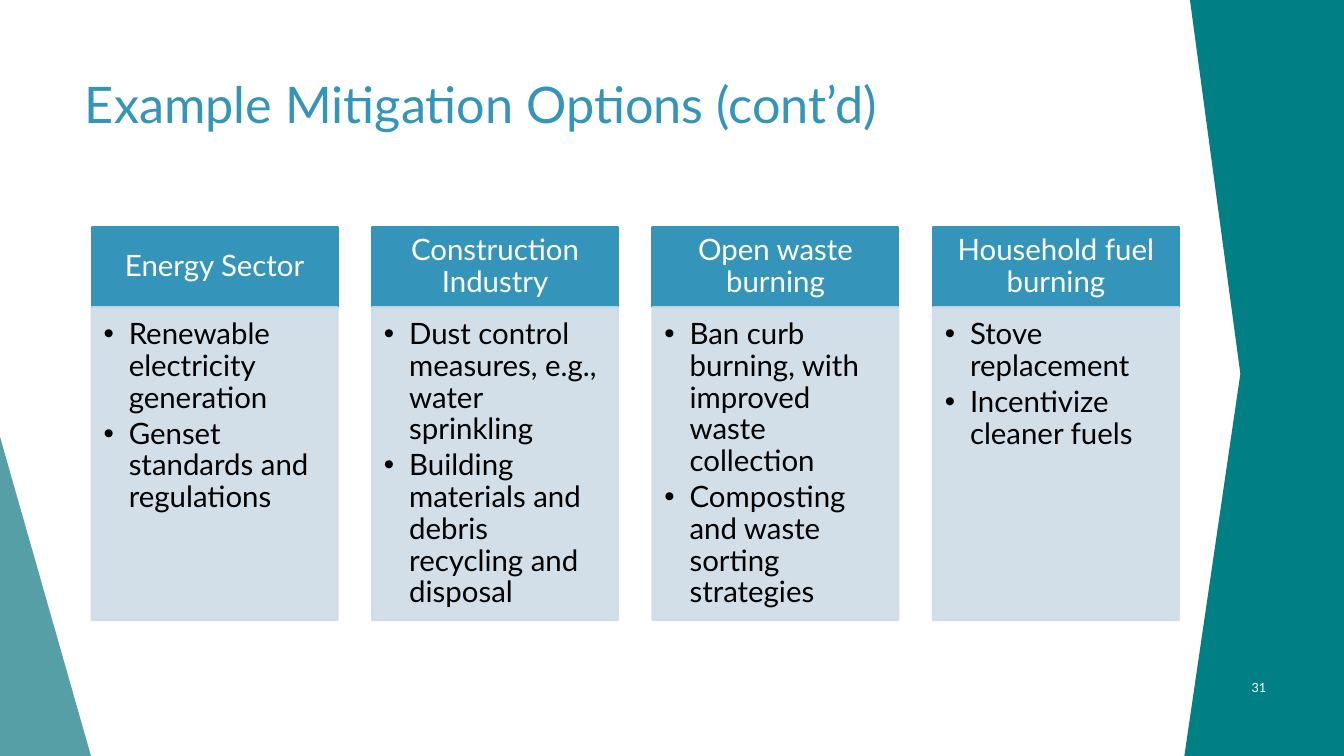
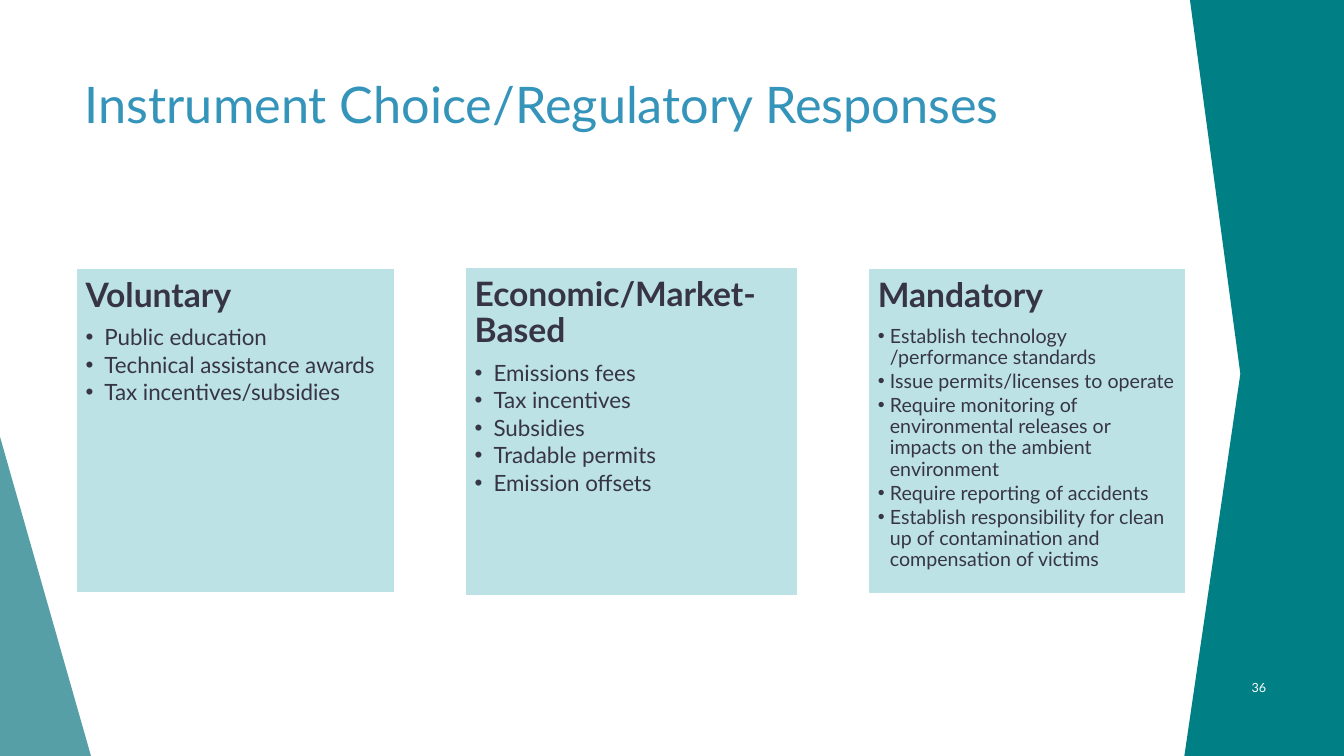
from dataclasses import dataclass

from lxml import etree
from pptx import Presentation
from pptx.dml.color import RGBColor
from pptx.enum.shapes import MSO_SHAPE
from pptx.enum.text import MSO_ANCHOR, MSO_AUTO_SIZE, PP_ALIGN
from pptx.oxml.ns import qn
from pptx.util import Pt

RECTANGLE = MSO_SHAPE.RECTANGLE
RIGHT_TRIANGLE = MSO_SHAPE.RIGHT_TRIANGLE
TOP, MIDDLE = MSO_ANCHOR.TOP, MSO_ANCHOR.MIDDLE
LEFT, CENTER, RIGHT = PP_ALIGN.LEFT, PP_ALIGN.CENTER, PP_ALIGN.RIGHT
NO_AUTO_SIZE = MSO_AUTO_SIZE.NONE
TITLE_ONLY = 5


@dataclass(frozen=True)
class Theme:
    font: str = "Lato"
    accent: str = "3494BA"
    band: str = "008085"
    wedge: str = "3A8F98"
    panel: str = "CEDCE7"
    card: str = "BCE2E6"
    ink: str = "373545"
    black: str = "000000"
    white: str = "FFFFFF"
    title_size: float = 36
    column_size: float = 21
    card_head_size: float = 24
    number_size: float = 9


@dataclass(frozen=True)
class Box:
    left: float
    top: float
    width: float
    height: float

    def lengths(self):
        return [Pt(v) for v in (self.left, self.top, self.width, self.height)]


THEME = Theme()
SLIDE = Box(0, 0, 960, 540)
TITLE_BOX = Box(53.5, 48.5, 858, 103.5)
NUMBER_BOX = Box(857.5, 476.5, 54, 29)
SECTORS_BOX = Box(65.5, 162, 776.6, 281)
BAND_OUTLINE = [(850, 0), (960, 0), (960, 540), (846, 540), (886, 267)]

SECTORS = [
    ("Energy Sector",
     ["Renewable electricity generation", "Genset standards and regulations"]),
    ("Construction Industry",
     ["Dust control measures, e.g., water sprinkling",
      "Building materials and debris recycling and disposal"]),
    ("Open waste burning",
     ["Ban curb burning, with improved waste collection",
      "Composting and waste sorting strategies"]),
    ("Household fuel burning",
     ["Stove replacement", "Incentivize cleaner fuels"]),
]

INSTRUMENTS = [
    (Box(54, 191.5, 228, 232.5), 16, 13.5, "Voluntary",
     ["Public education", "Technical assistance awards",
      "Tax incentives/subsidies"]),
    (Box(332, 191, 238, 234.5), 16, 13.5, "Economic/Market-Based",
     ["Emissions fees", "Tax incentives", "Subsidies", "Tradable permits",
      "Emission offsets"]),
    (Box(620, 191.5, 227, 233), 14, 8.6, "Mandatory",
     ["Establish technology /performance standards",
      "Issue permits/licenses to operate",
      "Require monitoring of environmental releases or impacts on the ambient environment",
      "Require reporting of accidents",
      "Establish responsibility for clean up of contamination and compensation of victims"]),
]


def paint(shape, fill, line=None, opacity=100):
    shape.shadow.inherit = False
    shape.fill.solid()
    shape.fill.fore_color.rgb = RGBColor.from_string(fill)
    if line:
        shape.line.color.rgb = RGBColor.from_string(line)
        shape.line.width = Pt(1.5)
    else:
        shape.line.fill.background()
    if opacity < 100:
        for color in shape.element.spPr.iter(qn("a:srgbClr")):
            etree.SubElement(color, qn("a:alpha"), val=str(opacity * 1000))


def add_panel(page, box, fill, line, opacity=100):
    panel = page.shapes.add_shape(RECTANGLE, *box.lengths())
    paint(panel, fill, line, opacity)
    return panel


def set_frame(frame, insets, anchor=TOP):
    frame.word_wrap = True
    frame.auto_size = NO_AUTO_SIZE
    frame.vertical_anchor = anchor
    (frame.margin_left, frame.margin_top,
     frame.margin_right, frame.margin_bottom) = [Pt(v) for v in insets]


def style(para, size, color, align=LEFT, bold=False):
    para.alignment = align
    for span in para.runs:
        span.font.name = THEME.font
        span.font.size = Pt(size)
        span.font.bold = bold
        span.font.color.rgb = RGBColor.from_string(color)


def space(para, size, share):
    para.line_spacing = 0.9
    para.space_after = Pt(round(size * share, 2))


def write_bullets(paras, items, size, color, indent):
    for para, item in zip(paras, items):
        para.text = item
        para.level = 1
        properties = para._p.get_or_add_pPr()
        properties.set("marL", str(Pt(indent)))
        properties.set("indent", str(-Pt(indent)))
        etree.SubElement(properties, qn("a:buFont"), typeface="Arial")
        etree.SubElement(properties, qn("a:buChar"), char="•")
        space(para, size, 0.15)
        style(para, size, color)


def grow(frame, count):
    while len(frame.paragraphs) < count:
        frame.add_paragraph()
    return frame.paragraphs


def add_sector(page, box, heading, items):
    head_height = 57.5
    size = THEME.column_size
    head = add_panel(page, Box(box.left, box.top, box.width, head_height),
                     THEME.accent, THEME.accent)
    set_frame(head.text_frame, (11.5, 6.5, 11.5, 6.5), MIDDLE)
    head.text_frame.text = heading
    para = head.text_frame.paragraphs[0]
    space(para, size, 0.35)
    style(para, size, THEME.white, CENTER)

    body = add_panel(page, Box(box.left, box.top + head_height, box.width,
                               box.height - head_height),
                     THEME.panel, THEME.panel, 90)
    set_frame(body.text_frame, (8.5, 8.5, 11.5, 13))
    write_bullets(grow(body.text_frame, len(items)), items, size,
                  THEME.black, 18)


def add_sectors(page, box, sectors):
    gap = 24.6
    width = (box.width - gap * (len(sectors) - 1)) / len(sectors)
    for index, (heading, items) in enumerate(sectors):
        left = box.left + index * (width + gap)
        add_sector(page, Box(left, box.top, width, box.height), heading, items)


def add_card(page, box, size, indent, heading, items):
    card = add_panel(page, box, THEME.card, THEME.white)
    set_frame(card.text_frame, (7.2, 7.2, 7.2, 7.2))
    head, *rest = grow(card.text_frame, len(items) + 1)
    head.text = heading
    space(head, THEME.card_head_size, 0.35)
    style(head, THEME.card_head_size, THEME.ink, bold=True)
    write_bullets(rest, items, size, THEME.ink, indent)


def decorate_layout(layout, page):
    wedge = page.shapes.add_shape(RIGHT_TRIANGLE, *Box(0, 312, 65, 228).lengths())
    paint(wedge, THEME.wedge, opacity=85)
    builder = page.shapes.build_freeform(*BAND_OUTLINE[0], scale=Pt(1))
    builder.add_line_segments(BAND_OUTLINE[1:], close=True)
    band = builder.convert_to_shape()
    paint(band, THEME.band)
    for offset, shape in enumerate((wedge, band)):
        shape.element.nvSpPr.cNvPr.set("id", str(101 + offset))
        layout.shapes.element.insert(2 + offset, shape.element)

    title = layout.placeholders[0]
    title.left, title.top, title.width, title.height = TITLE_BOX.lengths()


def add_page(deck, layout, title, number):
    page = deck.slides.add_slide(layout)
    frame = page.shapes.title.text_frame
    set_frame(frame, (7.2, 3.6, 7.2, 3.6))
    frame.text = title
    style(frame.paragraphs[0], THEME.title_size, THEME.accent)

    label = page.shapes.add_textbox(*NUMBER_BOX.lengths()).text_frame
    set_frame(label, (7.2, 3.6, 7.2, 3.6), MIDDLE)
    label.text = number
    style(label.paragraphs[0], THEME.number_size, THEME.white, RIGHT)
    return page


def main():
    deck = Presentation()
    deck.slide_width, deck.slide_height = Pt(SLIDE.width), Pt(SLIDE.height)
    layout = deck.slide_layouts[TITLE_ONLY]

    options = add_page(deck, layout, "Example Mitigation Options (cont’d)", "31")
    decorate_layout(layout, options)
    add_sectors(options, SECTORS_BOX, SECTORS)

    responses = add_page(deck, layout, "Instrument Choice/Regulatory Responses", "36")
    for instrument in INSTRUMENTS:
        add_card(responses, *instrument)

    deck.save("out.pptx")


if __name__ == "__main__":
    main()
